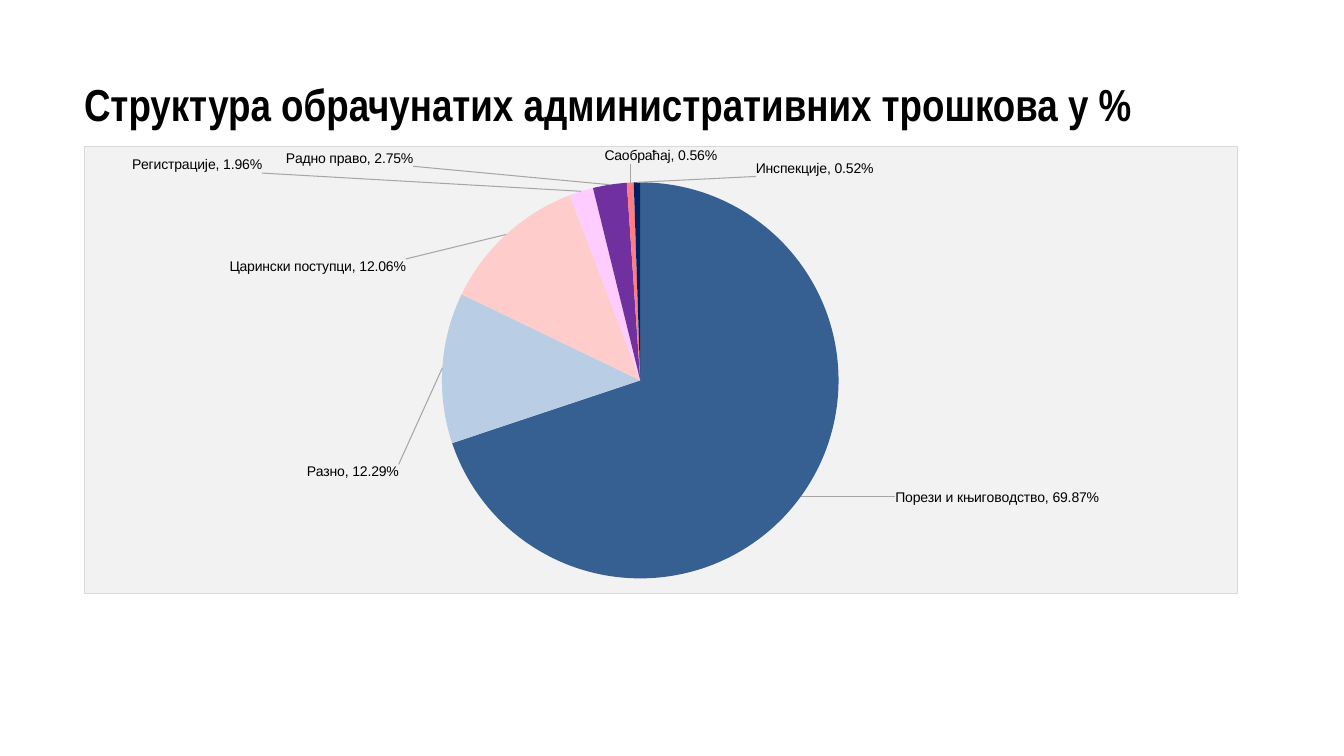
from dataclasses import dataclass

from lxml import etree
from pptx import Presentation
from pptx.chart.data import CategoryChartData
from pptx.dml.color import RGBColor
from pptx.enum import chart as kinds, text as txt
from pptx.oxml import ns
from pptx.util import Pt


@dataclass(frozen=True)
class Theme:
    ink: str = "000000"
    panel: str = "F2F2F2"
    edge: str = "D9D9D9"
    lead: str = "A6A6A6"
    head: str = "Arial Narrow"
    body: str = "Arial"
    big: int = 32
    small: int = 10


THEME = Theme()
LEFT, TOP, WIDE, HIGH = 60, 104.4, 824.4, 319.7

# Name, percent, colour, label shift in points (right, down)
COSTS = [
    ("Порези и књиговодство", 69.87, "376092", 64, -7),
    ("Разно", 12.29, "B9CDE5", -27, 75),
    ("Царински поступци", 12.06, "FFCCCC", -69, 32),
    ("Регистрације", 1.96, "FFCCFF", -227, -9),
    ("Радно право", 2.75, "7030A0", -140, -9),
    ("Саобраћај", 0.56, "FF7C80", 22, -9),
    ("Инспекције", 0.52, "002060", 127, 0),
]


def style(font, face, size, bold=False, color=THEME.ink):
    font.name, font.size, font.bold = face, Pt(size), bold
    font.color.rgb = RGBColor.from_string(color)


def add_text(slide, words, left, top, width, height, **form):
    box = slide.shapes.add_textbox(Pt(left), Pt(top), Pt(width), Pt(height))
    frame = box.text_frame
    frame.word_wrap = True
    frame.vertical_anchor = txt.MSO_ANCHOR.TOP
    frame.margin_left = frame.margin_right = 0
    frame.margin_top = frame.margin_bottom = 0
    run = frame.paragraphs[0].add_run()
    run.text = words
    style(run.font, **form)


def node(body):
    """Parse one chart element, with its namespaces declared."""
    tag, rest = body[:-1].split(">", 1) if body.endswith("/>") else body.split(">", 1)
    end = ">" if body.endswith("/>") else ""
    return etree.fromstring(f"{tag} {ns.nsdecls('c', 'a')}>{rest}{end}")


def line(color, width=Pt(0.75)):
    return (f'<a:ln w="{width}"><a:solidFill><a:srgbClr val="{color}"/>'
            '</a:solidFill></a:ln>')


def layout(**parts):
    """Manual layout, in shares of the chart area."""
    body = "".join(f'<c:{key} val="{val}"/>' for key, val in parts.items())
    return node(f"<c:layout><c:manualLayout>{body}</c:manualLayout></c:layout>")


def add_labels(plot):
    plot.has_data_labels = False
    marks = plot.series[0].data_labels
    marks.show_value = marks.show_category_name = True
    marks.number_format = '0.00"%"'
    marks.number_format_is_linked = False
    marks.position = kinds.XL_LABEL_POSITION.OUTSIDE_END
    style(marks.font, THEME.body, THEME.small)
    root = plot.series[0]._element.find(ns.qn("c:dLbls"))

    # Comma between name and value, then the leader lines
    for name in ("separator", "showLeaderLines", "leaderLines"):
        for old in root.findall(ns.qn(f"c:{name}")):
            root.remove(old)
    root.append(node("<c:separator>, </c:separator>"))
    shared = [etree.tostring(part) for part in root]
    root.append(node('<c:showLeaderLines val="1"></c:showLeaderLines>'))
    root.append(node(f"<c:leaderLines><c:spPr>{line(THEME.lead)}</c:spPr></c:leaderLines>"))

    # Each label shares the format and has its own shift
    for spot, (_, _, _, right, down) in enumerate(COSTS):
        label = node(f'<c:dLbl><c:idx val="{spot}"/></c:dLbl>')
        label.append(layout(x=round(right / WIDE, 4), y=round(down / HIGH, 4)))
        for part in shared:
            label.append(etree.fromstring(part))
        root.insert(spot, label)


def add_pie(slide):
    data = CategoryChartData(number_format="0.00")
    data.categories = [cost[0] for cost in COSTS]
    data.add_series("Series 1", [cost[1] for cost in COSTS])
    chart = slide.shapes.add_chart(
        kinds.XL_CHART_TYPE.PIE, Pt(LEFT), Pt(TOP), Pt(WIDE), Pt(HIGH), data).chart
    chart.has_title = chart.has_legend = False
    style(chart.font, THEME.body, THEME.small)
    plot = chart.plots[0]
    plot.vary_by_categories = True
    for spot, cost in enumerate(COSTS):
        form = plot.series[0].points[spot].format
        form.fill.solid()
        form.fill.fore_color.rgb = RGBColor.from_string(cost[2])
        form.line.fill.background()
    add_labels(plot)

    # Place of the pie
    area = chart._chartSpace.chart.plotArea
    for old in area.findall(ns.qn("c:layout")):
        area.remove(old)
    area.insert(0, layout(layoutTarget="inner", xMode="edge", yMode="edge",
                          x=0.31, y=0.08, w=0.344, h=0.887))

    # Panel behind it
    chart._chartSpace.chart.addnext(node(
        f'<c:spPr><a:solidFill><a:srgbClr val="{THEME.panel}"/></a:solidFill>'
        f"{line(THEME.edge)}</c:spPr>"))


def main():
    deck = Presentation()
    deck.slide_width, deck.slide_height = Pt(960), Pt(540)
    slide = deck.slides.add_slide(deck.slide_layouts[6])
    add_text(slide, "Структура обрачунатих административних трошкова у %",
             LEFT, 55, 860, 48, face=THEME.head, size=THEME.big, bold=True)
    add_pie(slide)
    deck.save("out.pptx")


if __name__ == "__main__":
    main()
